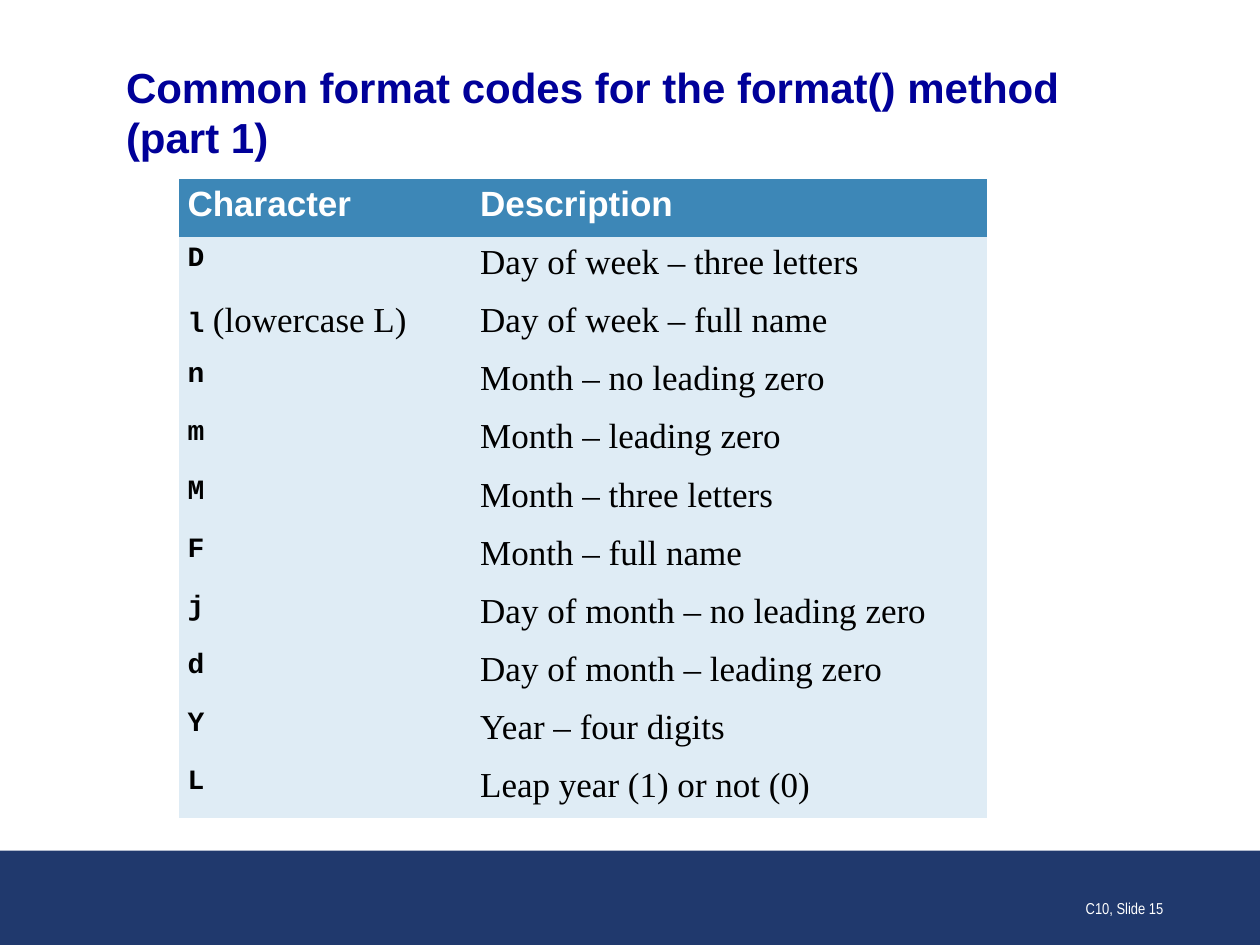
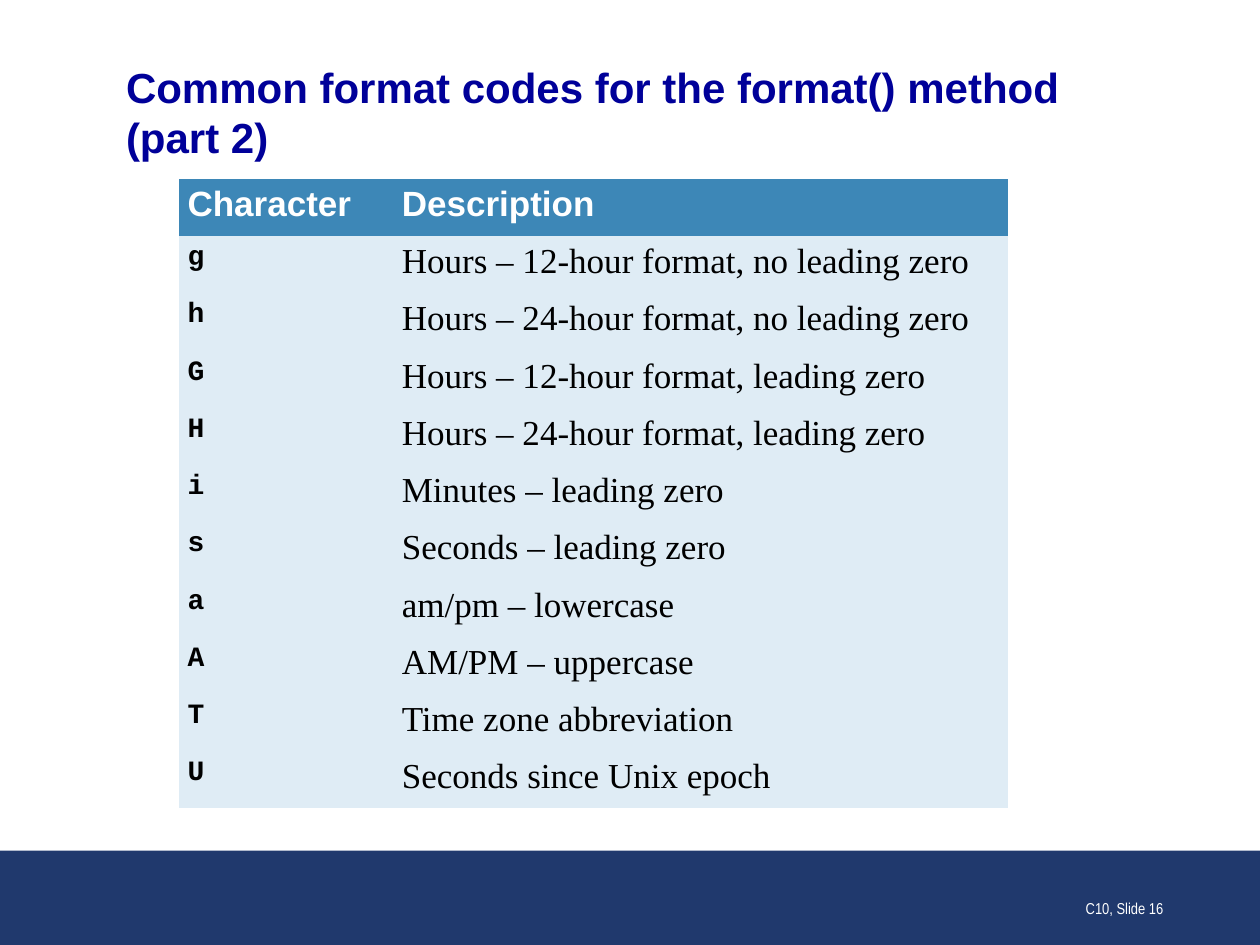
"""Build two slides that list date format codes."""
from dataclasses import dataclass
from typing import Any

from pptx import Presentation
from pptx.dml.color import RGBColor
from pptx.enum.shapes import MSO_SHAPE
from pptx.enum.text import MSO_ANCHOR, MSO_AUTO_SIZE, PP_ALIGN
from pptx.oxml.ns import qn
from pptx.util import Cm, Pt

NAVY = RGBColor(0x20, 0x39, 0x6D)
INK = RGBColor(0x00, 0x00, 0x99)
BLUE = RGBColor(0x3D, 0x87, 0xB7)
PALE = RGBColor(0xDF, 0xEC, 0xF5)
WHITE = RGBColor(0xFF, 0xFF, 0xFF)
BLACK = RGBColor(0x00, 0x00, 0x00)

RECT = MSO_SHAPE.RECTANGLE
MIDDLE, BOTTOM = MSO_ANCHOR.MIDDLE, MSO_ANCHOR.BOTTOM
LEFT, RIGHT = PP_ALIGN.LEFT, PP_ALIGN.RIGHT
FIXED = MSO_AUTO_SIZE.NONE

WIDTH, HEIGHT = Cm(25.4), Cm(19.05)
BAND = Cm(1.9)
PLAIN = "{2D5ABB26-0587-4C30-8999-92F81FD0307C}"
TITLE_ONLY = 5


@dataclass(frozen=True)
class Style:
    """Font and colour of a run."""
    name: str
    size: float
    color: RGBColor
    bold: bool = False


@dataclass(frozen=True)
class Code:
    """A format character and its meaning."""
    sign: str
    text: str
    note: str = ""


@dataclass(frozen=True)
class Page:
    """Content and table size of one slide."""
    title: str
    label: str
    cols: tuple[float, float]
    tall: float
    codes: tuple[Code, ...]


TITLE = Style("Arial", 24, INK, True)
HEAD = Style("Arial", 20, WHITE, True)
SIGN = Style("Courier New", 16, BLACK, True)
BODY = Style("Times New Roman", 20, BLACK)
FOOT = Style("Arial Narrow", 9, WHITE)

FLUSH = {"margin_left": 0, "margin_right": 0, "margin_top": 0,
         "margin_bottom": 0, "word_wrap": True, "auto_size": FIXED,
         "vertical_anchor": MIDDLE}
CELL = {"margin_left": Cm(0.18), "margin_right": Cm(0.18),
        "margin_top": Cm(0.13), "margin_bottom": Cm(0.13)}
NOTE = {"word_wrap": True, "vertical_anchor": BOTTOM}

TOPIC = "Common format codes for the format() method"
PAGES = (
    Page(f"{TOPIC} (part 1)", "C10, Slide 15", (5.9, 10.4), 12.9, (
        Code("D", "Day of week – three letters"),
        Code("l", "Day of week – full name", " (lowercase L)"),
        Code("n", "Month – no leading zero"),
        Code("m", "Month – leading zero"),
        Code("M", "Month – three letters"),
        Code("F", "Month – full name"),
        Code("j", "Day of month – no leading zero"),
        Code("d", "Day of month – leading zero"),
        Code("Y", "Year – four digits"),
        Code("L", "Leap year (1) or not (0)"),
    )),
    Page(f"{TOPIC} (part 2)", "C10, Slide 16", (4.32, 12.4), 12.7, (
        Code("g", "Hours – 12-hour format, no leading zero"),
        Code("h", "Hours – 24-hour format, no leading zero"),
        Code("G", "Hours – 12-hour format, leading zero"),
        Code("H", "Hours – 24-hour format, leading zero"),
        Code("i", "Minutes – leading zero"),
        Code("s", "Seconds – leading zero"),
        Code("a", "am/pm – lowercase"),
        Code("A", "AM/PM – uppercase"),
        Code("T", "Time zone abbreviation"),
        Code("U", "Seconds since Unix epoch"),
    )),
)


def apply(item: Any, values: dict[str, Any]) -> None:
    """Set each named attribute on the item."""
    for key, value in values.items():
        setattr(item, key, value)


def write(line: Any, text: str, style: Style) -> None:
    """Add a styled run to a paragraph."""
    run = line.add_run()
    run.text = text
    apply(run.font, {"name": style.name, "size": Pt(style.size),
                     "bold": style.bold})
    run.font.color.rgb = style.color


def add_band(slide: Any) -> None:
    """Draw the bottom band and move it to the slide's layout."""
    band = slide.shapes.add_shape(RECT, 0, HEIGHT - BAND, WIDTH, BAND)
    band.shadow.inherit = False
    band.fill.solid()
    band.fill.fore_color.rgb = NAVY
    band.line.fill.background()
    slide.slide_layout.shapes.element.insert(2, band.element)


def add_title(slide: Any, text: str) -> None:
    """Place and fill the title."""
    title = slide.shapes.title
    apply(title, {"left": Cm(2.54), "top": Cm(1.22),
                  "width": Cm(20.32), "height": Cm(2.06)})
    apply(title.text_frame, FLUSH)
    line = title.text_frame.paragraphs[0]
    line.alignment = LEFT
    write(line, text, TITLE)


def add_codes(slide: Any, page: Page) -> None:
    """Draw the table of format codes."""
    count = len(page.codes) + 1
    frame = slide.shapes.add_table(count, 2, Cm(3.6), Cm(3.6),
                                   Cm(sum(page.cols)), Cm(page.tall))
    frame.element.find(".//" + qn("a:tableStyleId")).text = PLAIN
    table = frame.table
    for col, width in zip(table.columns, page.cols):
        col.width = Cm(width)
    rows = [(((("Character", HEAD),), (("Description", HEAD),)), BLUE)]
    for code in page.codes:
        sign = [(code.sign, SIGN)]
        if code.note:
            sign.append((code.note, BODY))
        rows.append(((sign, ((code.text, BODY),)), PALE))
    for row, (cells, fill) in zip(table.rows, rows):
        row.height = Cm(page.tall / count)
        for cell, runs in zip(row.cells, cells):
            apply(cell, CELL)
            cell.fill.solid()
            cell.fill.fore_color.rgb = fill
            for text, style in runs:
                write(cell.text_frame.paragraphs[0], text, style)


def add_foot(slide: Any, label: str) -> None:
    """Write the slide label on the band."""
    box = slide.shapes.add_textbox(Cm(18.42), Cm(17.35), Cm(5.28), Cm(1.27))
    apply(box.text_frame, NOTE)
    line = box.text_frame.paragraphs[0]
    line.alignment = RIGHT
    write(line, label, FOOT)


def main() -> None:
    """Build and save the deck."""
    deck = Presentation()
    apply(deck, {"slide_width": WIDTH, "slide_height": HEIGHT})
    layout = deck.slide_layouts[TITLE_ONLY]
    for page in PAGES:
        slide = deck.slides.add_slide(layout)
        add_title(slide, page.title)
        add_codes(slide, page)
        add_foot(slide, page.label)
    add_band(deck.slides[0])
    deck.save("out.pptx")


if __name__ == "__main__":
    main()
